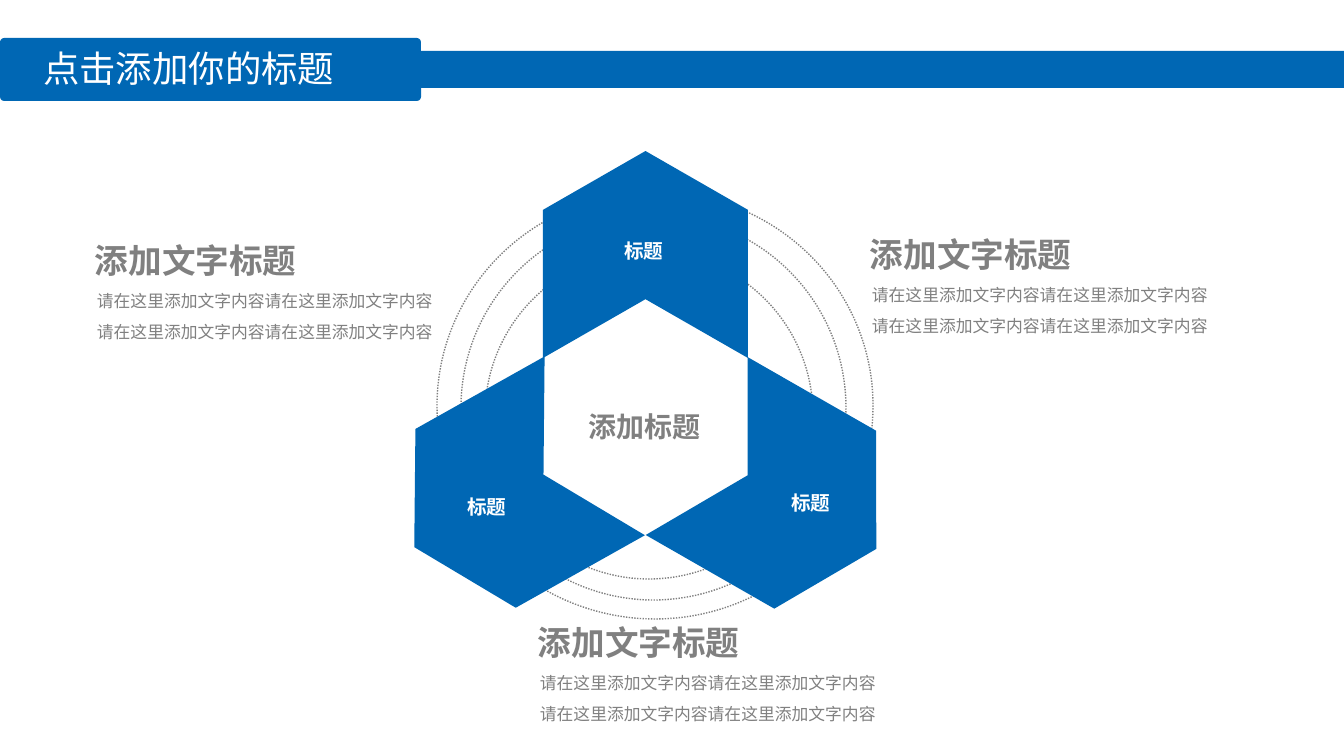
from lxml.etree import SubElement
from pptx import Presentation
from pptx.dml.color import RGBColor
from pptx.enum.dml import MSO_LINE
from pptx.enum.shapes import MSO_SHAPE
from pptx.enum.text import MSO_ANCHOR, MSO_AUTO_SIZE, PP_ALIGN
from pptx.oxml.ns import qn
from pptx.util import Pt

BLUE = RGBColor(0x00, 0x67, 0xB4)
GREY = RGBColor(0x80, 0x80, 0x80)
WHITE = RGBColor(0xFF, 0xFF, 0xFF)
CJK_FONT = "Noto Sans CJK SC"
BODY_FONT = "Calibri"
EMU_PER_PX = 914400 / 100.8
SLIDE_W, SLIDE_H = 1344, 756


def px(*lengths):
    return [round(length * EMU_PER_PX) for length in lengths]


def write(frame, text, size, color, font_name, bold=False,
          align=PP_ALIGN.LEFT, anchor=MSO_ANCHOR.TOP, line_spacing=None):
    frame.word_wrap = True
    frame.auto_size = MSO_AUTO_SIZE.NONE
    frame.vertical_anchor = anchor
    frame.text = text
    paragraph = frame.paragraphs[0]
    paragraph.alignment = align
    paragraph.line_spacing = line_spacing
    font = paragraph.font
    font.size, font.bold, font.name = Pt(size), bold, font_name
    font.color.rgb = color
    # East Asian characters take their own typeface
    defaults = paragraph._p.pPr.find(qn("a:defRPr"))
    SubElement(defaults, qn("a:ea"), typeface=font_name)


def add_text(slide, box, text, size, color, font_name, **style):
    frame = slide.shapes.add_textbox(*px(*box)).text_frame
    write(frame, text, size, color, font_name, **style)


def add_blue(slide, kind, box):
    shape = slide.shapes.add_shape(kind, *px(*box))
    shape.shadow.inherit = False
    shape.fill.solid()
    shape.fill.fore_color.rgb = BLUE
    shape.line.fill.background()
    return shape


def add_banner(slide, left, top, width):
    add_blue(slide, MSO_SHAPE.RECTANGLE, (left + 19, top + 13, width - 19, 37))
    tab = add_blue(slide, MSO_SHAPE.ROUNDED_RECTANGLE, (left, top, 421, 63))
    tab.adjustments[0] = 0.067
    title = slide.shapes.title
    title.left, title.top, title.width, title.height = px(left + 33, top + 3, 371, 54)
    write(title.text_frame, "点击添加你的标题", 26, WHITE, CJK_FONT,
          anchor=MSO_ANCHOR.MIDDLE)
    # Bring the title in front of the banner
    slide.shapes._spTree.append(title._element)


def add_diagram(slide, left, top):
    # Dotted rings
    for x, y, width, height in ((36, 40, 436, 427), (60, 63, 385, 385),
                                (84, 99, 328, 328)):
        ring = slide.shapes.add_shape(
            MSO_SHAPE.OVAL, *px(left + x, top + y, width, height))
        ring.shadow.inherit = False
        ring.fill.background()
        ring.line.color.rgb = GREY
        ring.line.width = Pt(1)
        ring.line.dash_style = MSO_LINE.ROUND_DOT

    # Three chevrons around the centre
    for x, y, rotation in ((0, 242, 150.7), (141, 0, 270), (282, 243, 29.8)):
        chevron = add_blue(slide, MSO_SHAPE.CHEVRON, (left + x, top + y, 207, 205))
        chevron.adjustments[0] = 0.287
        chevron.rotation = rotation

    # Labels
    add_text(slide, (left + 141, top + 253, 205, 44), "添加标题", 20, GREY,
             CJK_FONT, bold=True, align=PP_ALIGN.CENTER)
    for x, y in ((179, 82), (22, 338), (346, 334)):
        add_text(slide, (left + x, top + y, 128, 34), "标题", 14, WHITE,
                 CJK_FONT, bold=True, align=PP_ALIGN.CENTER)


def add_text_block(slide, left, top):
    add_text(slide, (left + 2, top + 45, 368, 88), "请在这里添加文字内容" * 4,
             12, GREY, BODY_FONT, line_spacing=1.5)
    add_text(slide, (left, top, 318, 58), "添加文字标题", 24, GREY, BODY_FONT,
             bold=True, anchor=MSO_ANCHOR.MIDDLE)


def main():
    deck = Presentation()
    deck.slide_width, deck.slide_height = px(SLIDE_W, SLIDE_H)
    slide = deck.slides.add_slide(deck.slide_layouts.get_by_name("Title Only"))
    add_banner(slide, 0, 38, SLIDE_W)
    add_diagram(slide, 401, 152)
    for left, top in ((860, 225), (528, 613), (85, 231)):
        add_text_block(slide, left, top)
    deck.save("out.pptx")


if __name__ == "__main__":
    main()
